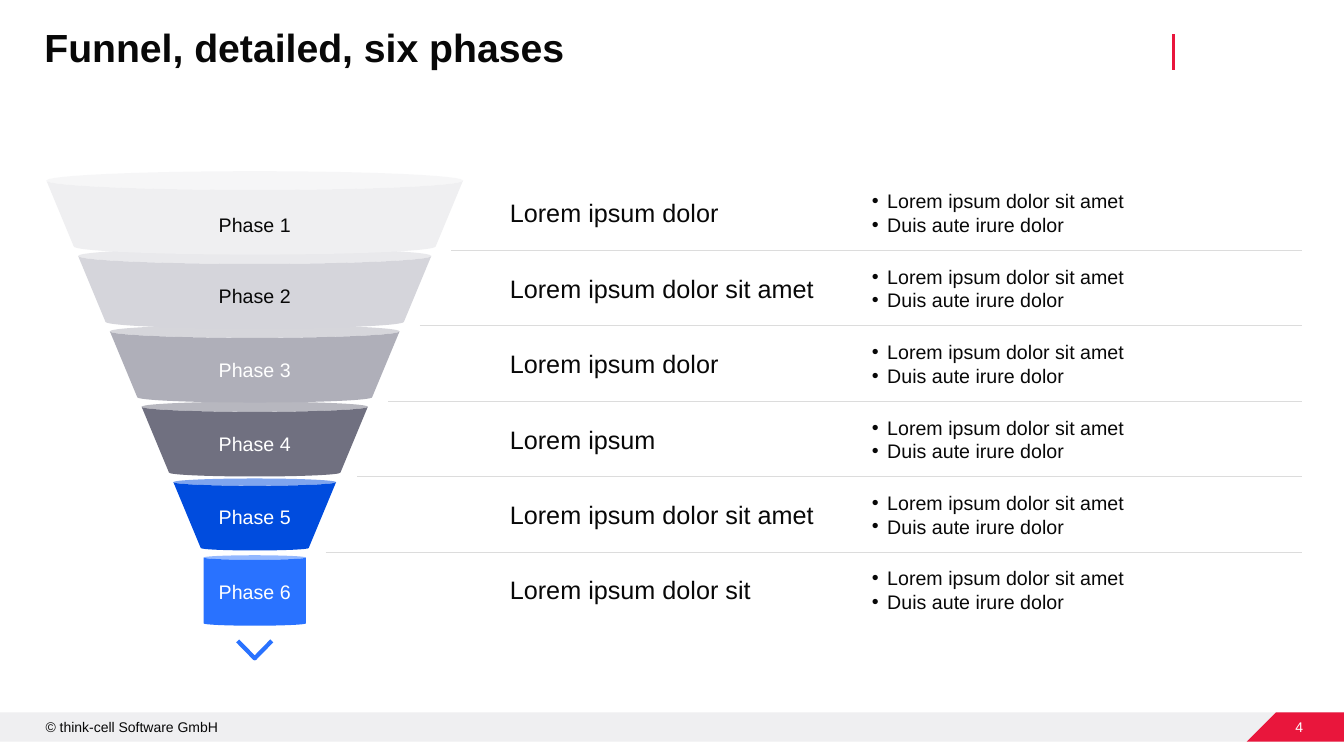
from dataclasses import dataclass

from lxml import etree
from pptx import Presentation
from pptx.dml.color import RGBColor
from pptx.enum.shapes import MSO_CONNECTOR, MSO_SHAPE
from pptx.enum.text import MSO_ANCHOR, PP_ALIGN
from pptx.oxml.ns import qn
from pptx.shapes.autoshape import Shape
from pptx.slide import Slide
from pptx.util import Cm, Pt

STRAIGHT = MSO_CONNECTOR.STRAIGHT
RECTANGLE, OVAL = MSO_SHAPE.RECTANGLE, MSO_SHAPE.OVAL
TOP, MIDDLE = MSO_ANCHOR.TOP, MSO_ANCHOR.MIDDLE
LEFT, CENTER, RIGHT = PP_ALIGN.LEFT, PP_ALIGN.CENTER, PP_ALIGN.RIGHT

FONT = "Arial"
INK = RGBColor(0x08, 0x08, 0x08)
WHITE = RGBColor(0xFF, 0xFF, 0xFF)
RED = RGBColor(0xE9, 0x16, 0x3C)
RULE_GRAY = RGBColor(0xDC, 0xDC, 0xDC)
PALE_GRAY = RGBColor(0xEF, 0xEF, 0xF1)
LIGHT_GRAY = RGBColor(0xD5, 0xD5, 0xDB)
MID_GRAY = RGBColor(0xAF, 0xAF, 0xB9)
DARK_GRAY = RGBColor(0x70, 0x70, 0x80)
DEEP_BLUE = RGBColor(0x00, 0x4C, 0xDE)
BRIGHT_BLUE = RGBColor(0x29, 0x72, 0xFF)

# All lengths are in centimetres.
SLIDE_WIDTH, SLIDE_HEIGHT = 33.87, 19.05
FOOTER_TOP, FOOTER_HEIGHT = 17.95, 0.74
RIGHT_EDGE = 32.82
FUNNEL_CENTER = 6.42
FUNNEL_TOP = 4.55
ROW_PITCH = 1.9
BODY_HEIGHT = 1.66
TOP_RADIUS = 5.25
RADIUS_STEP = 0.8
RULE_STEP = 0.79
BODY_TAPER = 0.69
SPOUT_RADIUS = 1.29
RIM_RATIO = 0.045
ARC_HANDLE = 0.55  # Bezier handle of a quarter ellipse, relative to its radius
BULLETS = ["Lorem ipsum dolor sit amet", "Duis aute irure dolor"]

Point = tuple[float, float]


@dataclass(frozen=True)
class Phase:
    label: str
    description: str
    fill: RGBColor
    label_color: RGBColor
    label_drop: float  # from the rim's centre to the label's centre


PHASES = [
    Phase("Phase 1", "Lorem ipsum dolor", PALE_GRAY, INK, 1.11),
    Phase("Phase 2", "Lorem ipsum dolor sit amet", LIGHT_GRAY, INK, 1.01),
    Phase("Phase 3", "Lorem ipsum dolor", MID_GRAY, WHITE, 0.97),
    Phase("Phase 4", "Lorem ipsum", DARK_GRAY, WHITE, 0.92),
    Phase("Phase 5", "Lorem ipsum dolor sit amet", DEEP_BLUE, WHITE, 0.87),
    Phase("Phase 6", "Lorem ipsum dolor sit", BRIGHT_BLUE, WHITE, 0.86),
]


def fill_plain(shape: Shape, color: RGBColor) -> None:
    shape.shadow.inherit = False
    shape.fill.solid()
    shape.fill.fore_color.rgb = color
    shape.line.fill.background()


def add_outline(slide: Slide, points: list[Point], close: bool = True) -> Shape:
    corners = [(Cm(x), Cm(y)) for x, y in points]
    builder = slide.shapes.build_freeform(*corners[0])
    builder.add_line_segments(corners[1:], close=close)
    shape = builder.convert_to_shape()
    shape.shadow.inherit = False
    return shape


def bend_segments(shape: Shape, starts: list[int]) -> None:
    """Merge three straight segments from each start into one Bezier curve."""
    segments = list(shape._element.iter(qn("a:lnTo")))
    for start in starts:
        first, *others = segments[start:start + 3]
        first.tag = qn("a:cubicBezTo")
        for segment in others:
            first.append(segment[0])
            segment.getparent().remove(segment)


def add_line(slide: Slide, start: Point, end: Point, color: RGBColor, width: float) -> None:
    line = slide.shapes.add_connector(
        STRAIGHT, Cm(start[0]), Cm(start[1]), Cm(end[0]), Cm(end[1]))
    line.line.color.rgb = color
    line.line.width = Pt(width)
    etree.SubElement(line._element.spPr, qn("a:effectLst"))


def add_text(slide: Slide, lines: list[str], left: float, top: float, width: float,
             height: float, size: float, color: RGBColor = INK, align: PP_ALIGN = LEFT,
             anchor: MSO_ANCHOR = MIDDLE, wrap: bool = True, bold: bool = False,
             bulleted: bool = False, line_spacing: float = 1.0) -> None:
    box = slide.shapes.add_textbox(Cm(left), Cm(top), Cm(width), Cm(height))
    frame = box.text_frame
    frame.margin_left = frame.margin_top = frame.margin_right = frame.margin_bottom = 0
    frame.word_wrap = wrap
    frame.vertical_anchor = anchor
    frame.text = "\n".join(lines)
    for paragraph in frame.paragraphs:
        paragraph.alignment = align
        paragraph.line_spacing = line_spacing
        if bulleted:
            properties = paragraph._p.get_or_add_pPr()
            properties.set("marL", str(Cm(0.39)))
            properties.set("indent", str(-Cm(0.39)))
            etree.SubElement(properties, qn("a:buFont")).set("typeface", FONT)
            etree.SubElement(properties, qn("a:buChar")).set("char", "•")
        for run in paragraph.runs:
            run.font.name = FONT
            run.font.size = Pt(size)
            run.font.bold = bold
            run.font.color.rgb = color


def front_arc(radius: float, center_y: float) -> list[Point]:
    """Ends and handles of a flat ellipse's front half, from right to left."""
    depth = radius * RIM_RATIO
    offsets = [(1, 0), (1, ARC_HANDLE), (ARC_HANDLE, 1), (0, 1),
               (-ARC_HANDLE, 1), (-1, ARC_HANDLE), (-1, 0)]
    return [(FUNNEL_CENTER + radius * x, center_y + depth * y) for x, y in offsets]


def add_funnel_stage(slide: Slide, index: int, phase: Phase) -> None:
    rim_y = FUNNEL_TOP + index * ROW_PITCH
    radius = max(TOP_RADIUS - index * RADIUS_STEP, SPOUT_RADIUS)
    base_radius = max(radius - BODY_TAPER, SPOUT_RADIUS)
    rim_depth = radius * RIM_RATIO

    rim = slide.shapes.add_shape(
        OVAL, Cm(FUNNEL_CENTER - radius), Cm(rim_y - rim_depth),
        Cm(2 * radius), Cm(2 * rim_depth))
    fill_plain(rim, phase.fill)
    rim_color = rim._element.spPr.find(qn("a:solidFill"))[0]
    etree.SubElement(rim_color, qn("a:alpha")).set("val", "50000")

    base = front_arc(base_radius, rim_y + BODY_HEIGHT)
    body = add_outline(slide, front_arc(radius, rim_y) + base[::-1])
    bend_segments(body, [0, 3, 7, 10])
    fill_plain(body, phase.fill)


def add_phase_row(slide: Slide, index: int, phase: Phase) -> None:
    offset = index * ROW_PITCH
    label_radius = max(TOP_RADIUS - (index + 1) * RADIUS_STEP, SPOUT_RADIUS)
    add_text(slide, [phase.label], FUNNEL_CENTER - label_radius,
             FUNNEL_TOP + offset + phase.label_drop - 0.3, 2 * label_radius, 0.6,
             14, phase.label_color, CENTER, wrap=False)
    add_text(slide, [phase.description], 12.85, 4.58 + offset, 7.98, 1.57, 18)
    add_text(slide, BULLETS, 21.97, 4.77 + offset, 10.85, 1.19, 14,
             anchor=TOP, bulleted=True)
    if index < len(PHASES) - 1:
        rule_y = 6.31 + offset
        add_line(slide, (11.37 - index * RULE_STEP, rule_y), (RIGHT_EDGE, rule_y),
                 RULE_GRAY, 0.75)


def add_frame(slide: Slide) -> None:
    """Title, accent bar and footer."""
    footer = slide.shapes.add_shape(
        RECTANGLE, 0, Cm(FOOTER_TOP), Cm(SLIDE_WIDTH), Cm(FOOTER_HEIGHT))
    fill_plain(footer, PALE_GRAY)
    footer_bottom = FOOTER_TOP + FOOTER_HEIGHT
    page_tab = add_outline(slide, [
        (32.16, FOOTER_TOP), (SLIDE_WIDTH, FOOTER_TOP),
        (SLIDE_WIDTH, footer_bottom), (31.42, footer_bottom)])
    fill_plain(page_tab, RED)
    add_text(slide, ["© think-cell Software GmbH"], 1.15, 18.11, 6.25, 0.43, 10, anchor=TOP)
    add_text(slide, ["4"], 32.41, 18.11, 0.43, 0.43, 10, WHITE, RIGHT, wrap=False)
    add_line(slide, (29.57, 0.86), (29.57, 1.77), RED, 2.25)
    add_text(slide, ["Funnel, detailed, six phases"], 1.12, 0.71, 28.02, 1.07, 28,
             anchor=TOP, bold=True, line_spacing=0.9)


def main() -> None:
    presentation = Presentation()
    presentation.slide_width = Cm(SLIDE_WIDTH)
    presentation.slide_height = Cm(SLIDE_HEIGHT)
    slide = presentation.slides.add_slide(presentation.slide_layouts[6])

    add_frame(slide)
    for index, phase in reversed(list(enumerate(PHASES))):
        add_funnel_stage(slide, index, phase)
    chevron = add_outline(
        slide, [(5.99, 16.15), (FUNNEL_CENTER, 16.59), (6.85, 16.15)], close=False)
    chevron.fill.background()
    chevron.line.color.rgb = BRIGHT_BLUE
    chevron.line.width = Pt(3)
    for index, phase in enumerate(PHASES):
        add_phase_row(slide, index, phase)

    presentation.save("out.pptx")


if __name__ == "__main__":
    main()
